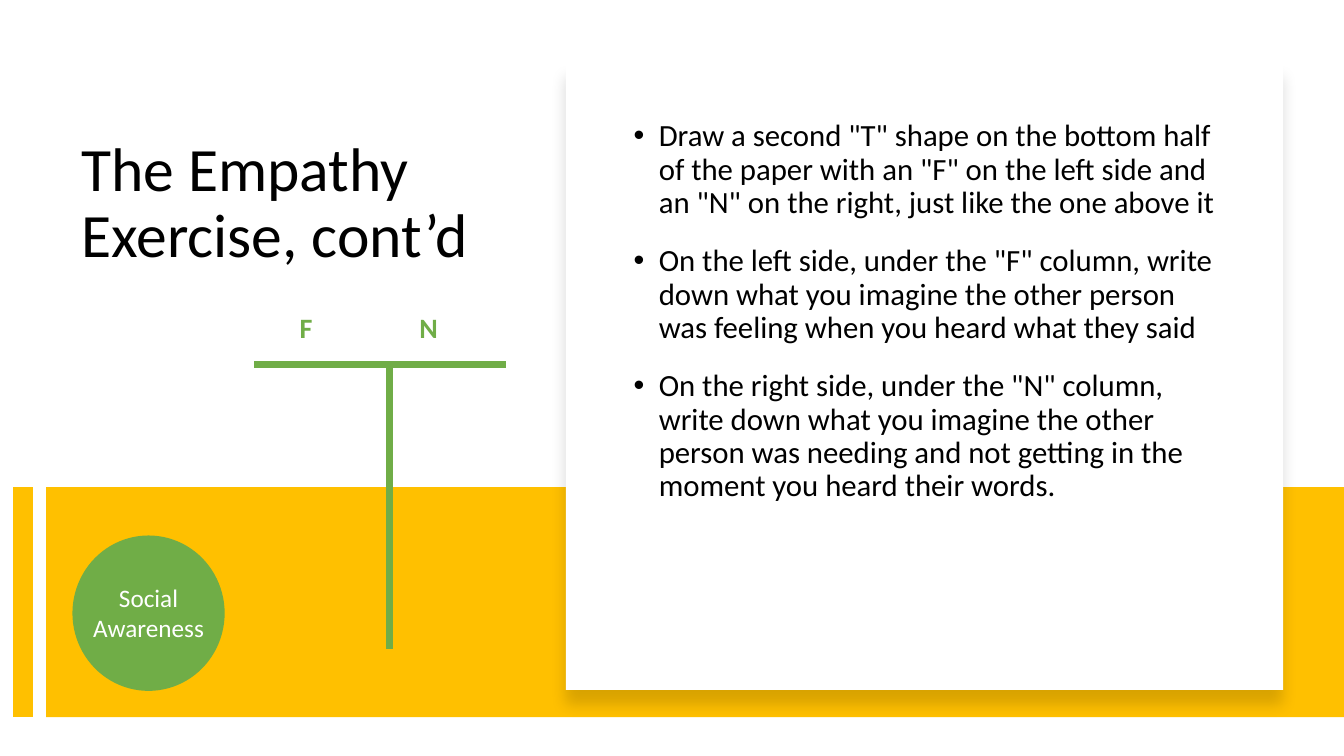
from lxml import etree
from pptx import Presentation
from pptx.dml.color import RGBColor
from pptx.enum.shapes import MSO_CONNECTOR, MSO_SHAPE
from pptx.enum.text import MSO_ANCHOR, PP_ALIGN
from pptx.oxml.ns import qn
from pptx.util import Emu, Pt

RECT, OVAL = MSO_SHAPE.RECTANGLE, MSO_SHAPE.OVAL
STRAIGHT = MSO_CONNECTOR.STRAIGHT
TOP, CENTER = MSO_ANCHOR.TOP, PP_ALIGN.CENTER
GOLD, GREEN, WHITE, BLACK = "FFC000", "70AD47", "FFFFFF", "000000"
STEPS = [
    'Draw a second "T" shape on the bottom half of the paper with an "F" on the left side '
    'and an "N" on the right, just like the one above it',
    'On the left side, under the "F" column, write down what you imagine the other person '
    'was feeling when you heard what they said',
    'On the right side, under the "N" column, write down what you imagine the other person '
    'was needing and not getting in the moment you heard their words.',
]


def px(n):
    return Emu(n * 9525)


def color(value):
    return RGBColor.from_string(value)


def add_node(parent, tag, **attrs):
    node = etree.SubElement(parent, qn(tag))
    for name, value in attrs.items():
        node.set(name, str(value))
    return node


def add_block(s, kind, box, fill):
    sp = s.shapes.add_shape(kind, *map(px, box))
    sp.shadow.inherit = False
    sp.fill.solid()
    sp.fill.fore_color.rgb = color(fill)
    sp.line.fill.background()
    return sp


def add_rule(s, x1, y1, x2, y2, stroke, width):
    line = s.shapes.add_connector(STRAIGHT, px(x1), px(y1), px(x2), px(y2))
    line.line.color.rgb = color(stroke)
    line.line.width = Pt(width)
    add_node(line._element.spPr, "a:effectLst")


def add_text(s, box, lines, font, para=None):
    """Add a text box and return its paragraphs."""
    tf = s.shapes.add_textbox(*map(px, box)).text_frame
    tf.word_wrap = True
    tf.vertical_anchor = TOP
    for i, line in enumerate(lines):
        p = tf.add_paragraph() if i else tf.paragraphs[0]
        for name, value in (para or {}).items():
            setattr(p, name, value)
        r = p.add_run()
        r.text = line
        r.font.color.rgb = color(font["color"])
        for name, value in {"name": "Calibri", "size": Pt(font["size"]),
                            "bold": font.get("bold", False)}.items():
            setattr(r.font, name, value)
    return tf.paragraphs


def add_band(s, x, y, w, h):
    # Narrow stripe, then the wide band running to the slide edge
    add_block(s, RECT, (x + 22, y, w - 22, h), GOLD)
    add_rule(s, x, y, x, y + h, GOLD, 14)


def add_card(s, x, y, w, h):
    # White panel with a soft shadow below
    card = add_block(s, RECT, (x, y, w, h), WHITE)
    effects = card._element.spPr.find(qn("a:effectLst"))
    shadow = add_node(effects, "a:outerShdw", blurRad=Pt(11), dist=Pt(10),
                      dir=90 * 60000, algn="t", rotWithShape=0)
    add_node(add_node(shadow, "a:srgbClr", val=BLACK), "a:alpha", val=15000)

    # Bulleted steps
    steps = add_text(s, (x + 55, y + 49, w - 101, h - 73), STEPS,
                     {"size": 22, "color": BLACK},
                     {"line_spacing": 0.9, "space_before": Pt(18)})
    for p in steps:
        pPr = p._p.get_or_add_pPr()
        pPr.set("marL", str(px(24)))
        pPr.set("indent", str(px(-24)))
        add_node(pPr, "a:buFont", typeface="Arial")
        add_node(pPr, "a:buChar", char="•")


def add_badge(s, x, y, w, h):
    add_block(s, OVAL, (x, y, w, h), GREEN)
    add_text(s, (x - 6, y + 40, w + 12, 68), ["Social Awareness"],
             {"size": 18, "color": WHITE}, {"alignment": CENTER})


def add_t_chart(s, x, y, w, h):
    # Stem and crossbar
    bar_y, stem_x = y + 56, x + 129
    add_rule(s, stem_x, bar_y, stem_x, y + h, GREEN, 4.5)
    add_rule(s, x, bar_y, x + w, bar_y, GREEN, 4.5)

    # Column letters on tab stops
    letters = add_text(s, (x + 16, y, 208, 42), ["\tF\tN"],
                       {"size": 20, "color": GREEN, "bold": True})
    tabs = add_node(letters[0]._p.get_or_add_pPr(), "a:tabLst")
    for pos in (18, 132):
        add_node(tabs, "a:tab", pos=px(pos), algn="l")


def main():
    prs = Presentation()
    prs.slide_width, prs.slide_height = px(1280), px(720)
    s = prs.slides.add_slide(prs.slide_layouts[6])
    add_band(s, 22, 464, 1258, 219)
    add_text(s, (68, 127, 398, 310), ["The Empathy Exercise, cont’d"],
             {"size": 44, "color": BLACK}, {"line_spacing": 0.9})
    add_card(s, 539, 61, 683, 596)
    add_badge(s, 69, 510, 145, 148)
    add_t_chart(s, 242, 291, 240, 327)
    prs.save("out.pptx")


if __name__ == "__main__":
    main()
